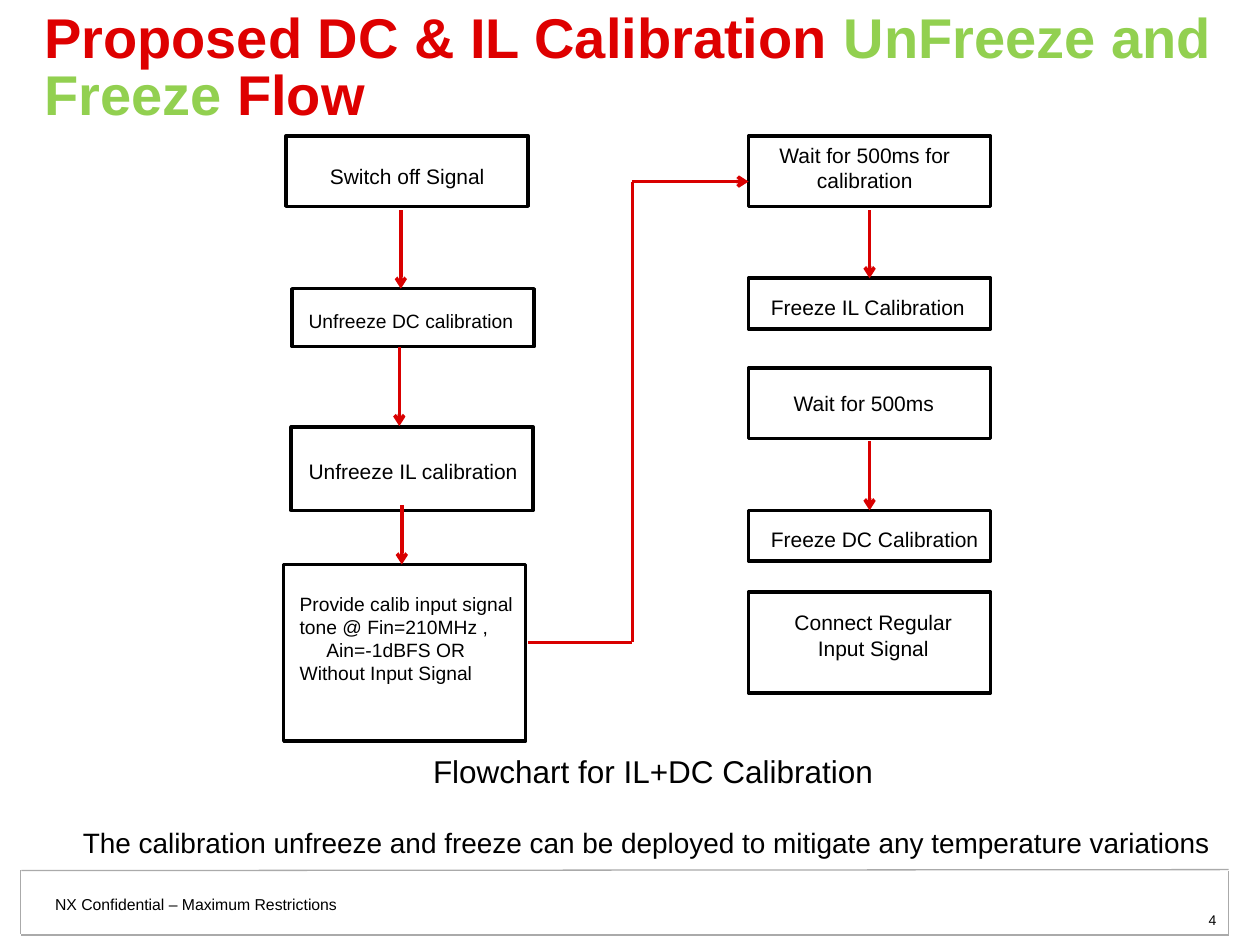
from dataclasses import dataclass

from lxml.etree import SubElement
from pptx import Presentation
from pptx.dml.color import RGBColor
from pptx.enum.shapes import MSO_CONNECTOR, MSO_SHAPE
from pptx.enum.text import MSO_ANCHOR, MSO_AUTO_SIZE, PP_ALIGN
from pptx.oxml.ns import qn
from pptx.util import Cm, Pt


@dataclass(frozen=True)
class Theme:
    font: str = "Arial"
    black: str = "000000"
    white: str = "FFFFFF"
    title: str = "DE0000"
    accent: str = "92D050"
    flow: str = "D90000"
    frame: str = "AAAAAA"
    title_size: float = 32
    caption_size: float = 18
    note_size: float = 16
    label_size: float = 12
    small_label_size: float = 11
    footer_size: float = 9
    number_size: float = 8
    flow_width: float = 2
    frame_width: float = 0.75


class FlowSlide:
    """Draw the elements of a flowchart slide in one theme."""

    def __init__(self, slide, theme):
        self.slide = slide
        self.theme = theme

    def style_run(self, run, size, color, bold=False):
        run.font.name = self.theme.font
        run.font.size = Pt(size)
        run.font.bold = bold
        run.font.color.rgb = RGBColor.from_string(color)

    def box(self, left, top, width, height, fill=None):
        shape = self.slide.shapes.add_shape(
            MSO_SHAPE.RECTANGLE, Cm(left), Cm(top), Cm(width), Cm(height))
        shape.shadow.inherit = False
        if fill:
            shape.fill.solid()
            shape.fill.fore_color.rgb = RGBColor.from_string(fill)
            shape.line.fill.background()
        else:
            shape.fill.background()
            shape.line.color.rgb = RGBColor.from_string(self.theme.black)
            shape.line.width = Pt(self.theme.flow_width)

    def line(self, start, end, color, width, arrow=False):
        connector = self.slide.shapes.add_connector(
            MSO_CONNECTOR.STRAIGHT, *map(Cm, start + end))
        connector.line.color.rgb = RGBColor.from_string(color)
        connector.line.width = Pt(width)
        if arrow:
            SubElement(connector.line._get_or_add_ln(), qn("a:tailEnd"), type="arrow")
        SubElement(connector._element.spPr, qn("a:effectLst"))

    def text(self, left, top, width, height, text, size,
             align=PP_ALIGN.LEFT, wrap=False, indents=()):
        shape = self.slide.shapes.add_textbox(Cm(left), Cm(top), Cm(width), Cm(height))
        text_frame = shape.text_frame
        text_frame.text = text
        text_frame.word_wrap = wrap
        if not wrap:
            text_frame.auto_size = MSO_AUTO_SIZE.SHAPE_TO_FIT_TEXT
        for paragraph in text_frame.paragraphs:
            paragraph.alignment = align
            for run in paragraph.runs:
                self.style_run(run, size, self.theme.black)
        for index, indent in indents:
            properties = text_frame.paragraphs[index]._p.get_or_add_pPr()
            properties.set("marL", str(Cm(indent)))

    def title(self, left, top, width, height, parts):
        shape = self.slide.shapes.add_textbox(Cm(left), Cm(top), Cm(width), Cm(height))
        text_frame = shape.text_frame
        text_frame.word_wrap = True
        text_frame.vertical_anchor = MSO_ANCHOR.MIDDLE
        paragraph = text_frame.paragraphs[0]
        paragraph.line_spacing = 0.85
        for text, color in parts:
            run = paragraph.add_run()
            run.text = text
            self.style_run(run, self.theme.title_size, color, bold=True)


def main():
    presentation = Presentation()
    presentation.slide_width = Cm(25.4)
    presentation.slide_height = Cm(19.05)
    theme = Theme()
    slide = presentation.slides.add_slide(presentation.slide_layouts[6])
    flow = FlowSlide(slide, theme)

    flow.box(0.43, 17.58, 24.33, 1.27, fill=theme.white)
    for start, end in [
        ((0.43, 18.85), (24.77, 18.85)),
        ((0.43, 17.55), (24.77, 17.53)),
        ((24.77, 18.85), (24.77, 17.55)),
        ((0.41, 18.82), (0.41, 17.53)),
    ]:
        flow.line(start, end, theme.frame, theme.frame_width)
    flow.text(0.86, 17.91, 7.04, 0.64, "NX Confidential – Maximum Restrictions",
              theme.footer_size, wrap=True)
    flow.text(18.85, 18.26, 5.92, 0.58, "4", theme.number_size,
              align=PP_ALIGN.RIGHT, wrap=True)

    flow.title(0.64, 0.28, 24.13, 2.26, [
        ("Proposed DC & IL Calibration ", theme.title),
        ("UnFreeze and Freeze ", theme.accent),
        ("Flow", theme.title),
    ])

    box_width = 4.88
    right_column = 15.09
    for left, top, height in [
        (5.77, 2.74, 1.42),
        (5.89, 5.82, 1.17),
        (5.87, 8.61, 1.68),
        (5.72, 11.38, 3.56),
        (right_column, 2.74, 1.42),
        (right_column, 5.61, 1.02),
        (right_column, 7.42, 1.42),
        (right_column, 10.29, 1.02),
        (right_column, 11.94, 2.03),
    ]:
        flow.box(left, top, box_width, height)

    for x, top, bottom in [
        (8.08, 4.24, 5.82),
        (8.05, 6.99, 8.59),
        (8.1, 10.19, 11.38),
        (17.53, 4.24, 5.61),
        (17.53, 8.89, 10.29),
    ]:
        flow.line((x, top), (x, bottom), theme.flow, theme.flow_width, arrow=True)

    corners = [(10.64, 12.95), (12.75, 12.95), (12.75, 3.66), (right_column, 3.66)]
    for start, end in zip(corners, corners[1:]):
        flow.line(start, end, theme.flow, theme.flow_width, arrow=end == corners[-1])

    for left, top, width, height, text in [
        (6.4, 3.18, 3.66, 0.76, "Switch off Signal"),
        (5.97, 9.12, 4.75, 0.64, "Unfreeze IL calibration"),
        (15.29, 5.82, 4.45, 0.76, "Freeze IL Calibration"),
        (15.75, 7.75, 3.38, 0.76, "Wait for 500ms"),
        (15.29, 10.49, 4.72, 0.76, "Freeze DC Calibration"),
    ]:
        flow.text(left, top, width, height, text, theme.label_size)
    flow.text(15.44, 2.74, 3.99, 1.27, "Wait for 500ms for\ncalibration",
              theme.label_size, align=PP_ALIGN.CENTER)
    flow.text(15.75, 12.17, 3.71, 1.37, "Connect Regular\nInput Signal",
              theme.label_size, align=PP_ALIGN.CENTER)
    flow.text(5.97, 6.12, 4.67, 0.74, "Unfreeze DC calibration", theme.small_label_size)
    flow.text(5.79, 11.81, 4.85, 2.29,
              "Provide calib input signal\ntone @ Fin=210MHz ,\n"
              "Ain=-1dBFS OR\nWithout Input Signal",
              theme.small_label_size, indents=[(2, 0.54)])

    flow.text(8.48, 15.04, 9.47, 1.02, "Flowchart for IL+DC Calibration",
              theme.caption_size)
    flow.text(1.42, 16.51, 23.8, 0.94,
              "The calibration unfreeze and freeze can be deployed "
              "to mitigate any temperature variations", theme.note_size, wrap=True)

    presentation.save("out.pptx")


if __name__ == "__main__":
    main()
